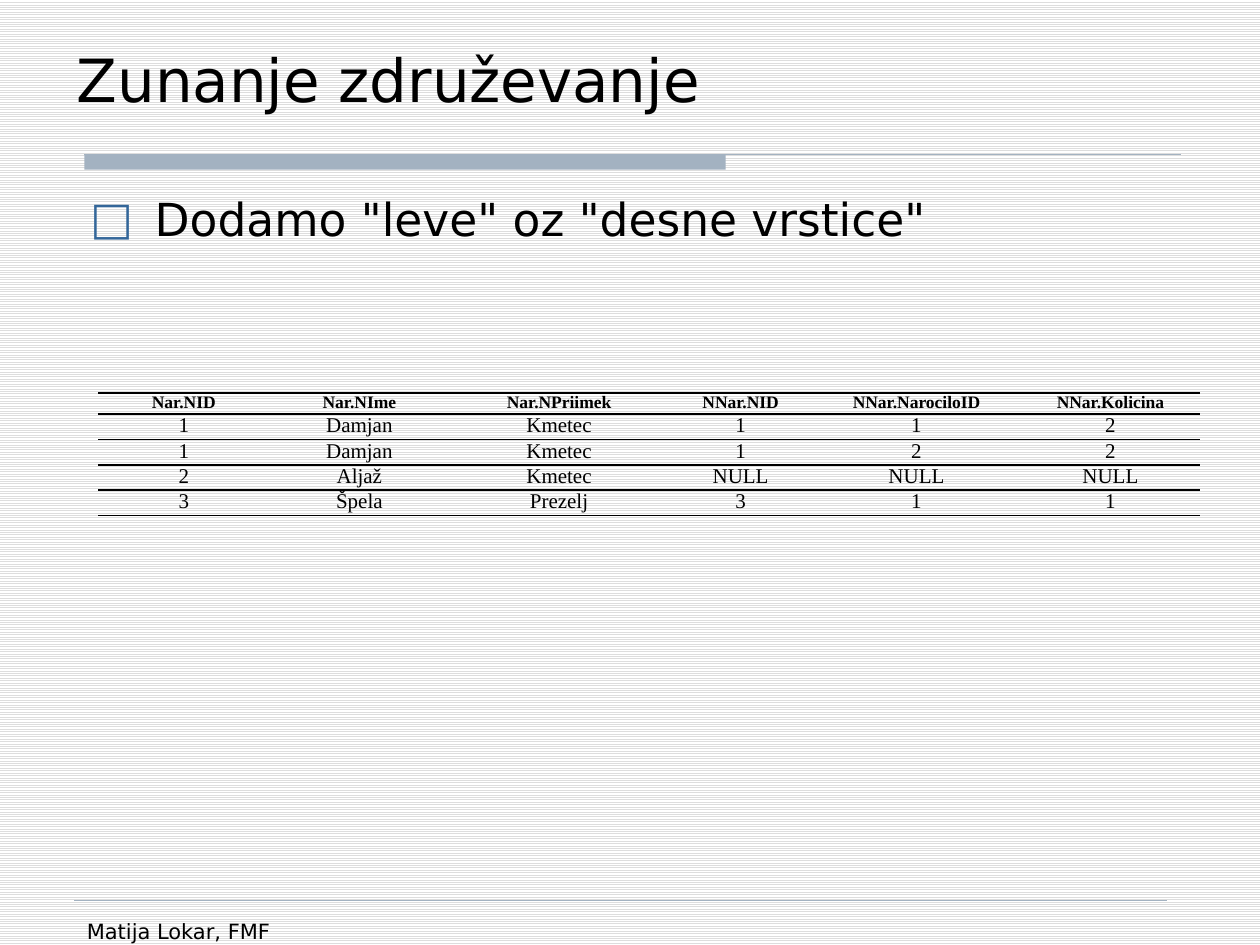
from lxml.etree import SubElement
from pptx import Presentation
from pptx.dml.color import RGBColor
from pptx.enum.dml import MSO_PATTERN
from pptx.enum.shapes import MSO_CONNECTOR, MSO_SHAPE
from pptx.enum.text import MSO_ANCHOR, PP_ALIGN
from pptx.oxml.ns import qn
from pptx.util import Cm, Pt

TITLE = "Zunanje združevanje"
POINT = 'Dodamo "leve" oz "desne vrstice"'
AUTHOR = "Matija Lokar, FMF"
JOINED_ROWS = [
    ("Nar.NID", "Nar.NIme", "Nar.NPriimek", "NNar.NID", "NNar.NarociloID", "NNar.Kolicina"),
    ("1", "Damjan", "Kmetec", "1", "1", "2"),
    ("1", "Damjan", "Kmetec", "1", "2", "2"),
    ("2", "Aljaž", "Kmetec", "NULL", "NULL", "NULL"),
    ("3", "Špela", "Prezelj", "3", "1", "1"),
]
COLUMN_WIDTHS = (3.45, 3.63, 4.42, 2.9, 4.19, 3.63)
HEADER_HEIGHT, ROW_HEIGHT = 0.43, 0.51

BLACK, ACCENT, BULLET = "000000", "A3B2C1", "336699"
SANS, SERIF = "DejaVu Sans", "Times New Roman"
CELL_FORMAT = {
    "margin_left": Cm(0.23), "margin_right": Cm(0.23),
    "margin_top": 0, "margin_bottom": 0,
}


def rgb(color):
    return RGBColor.from_string(color)


def apply(target, values):
    for name, value in values.items():
        setattr(target, name, value)


def write(paragraph, words, size, face, bold=False):
    run = paragraph.add_run()
    run.text = words
    apply(run.font, {"size": Pt(size), "name": face, "bold": bold})
    run.font.color.rgb = rgb(BLACK)


def add_words(slide, box, words, size, anchor=MSO_ANCHOR.TOP):
    frame = slide.shapes.add_textbox(*map(Cm, box)).text_frame
    apply(frame, {"word_wrap": True, "vertical_anchor": anchor})
    paragraph = frame.paragraphs[0]
    write(paragraph, words, size, SANS)
    return paragraph


def add_bullet(paragraph, indent):
    paragraph.space_before = Pt(5.2)  # a fifth of the text size
    properties = paragraph._p.get_or_add_pPr()
    properties.set("marL", str(Cm(indent)))
    properties.set("indent", str(-Cm(indent)))
    color = SubElement(properties, qn("a:buClr"))
    SubElement(color, qn("a:srgbClr"), val=BULLET)
    SubElement(properties, qn("a:buFont"), typeface=SANS)
    SubElement(properties, qn("a:buChar"), char="□")


def add_rule(slide, left, right, y, width):
    rule = slide.shapes.add_connector(
        MSO_CONNECTOR.STRAIGHT, Cm(left), Cm(y), Cm(right), Cm(y))
    rule.line.color.rgb = rgb(ACCENT)
    rule.line.width = Pt(width)
    SubElement(rule._element.spPr, qn("a:effectLst"))


def add_borders(cell):
    """Rule the cell above and below, and leave its sides open."""
    properties = cell._tc.get_or_add_tcPr()
    for side in ("lnL", "lnR"):
        SubElement(SubElement(properties, qn(f"a:{side}")), qn("a:noFill"))
    for side in ("lnT", "lnB"):
        line = SubElement(properties, qn(f"a:{side}"), w=str(Pt(1)))
        fill = SubElement(line, qn("a:solidFill"))
        SubElement(fill, qn("a:srgbClr"), val=BLACK)


def add_join_table(slide, left, top):
    heights = [HEADER_HEIGHT] + [ROW_HEIGHT] * (len(JOINED_ROWS) - 1)
    table = slide.shapes.add_table(
        len(heights), len(COLUMN_WIDTHS), Cm(left), Cm(top),
        Cm(sum(COLUMN_WIDTHS)), Cm(sum(heights))).table
    apply(table, {"first_row": False, "horz_banding": False})
    for column, width in zip(table.columns, COLUMN_WIDTHS):
        column.width = Cm(width)
    for r, (row, height) in enumerate(zip(table.rows, heights)):
        row.height = Cm(height)
        is_header = r == 0
        for cell, words in zip(row.cells, JOINED_ROWS[r]):
            apply(cell, CELL_FORMAT)
            add_borders(cell)
            cell.fill.background()
            paragraph = cell.text_frame.paragraphs[0]
            paragraph.alignment = PP_ALIGN.CENTER
            write(paragraph, words, 10 if is_header else 12, SERIF, is_header)


def main():
    deck = Presentation()
    apply(deck, {"slide_width": Cm(25.4), "slide_height": Cm(19.05)})
    slide = deck.slides.add_slide(deck.slide_layouts[6])

    backdrop = slide.background.fill
    backdrop.patterned()
    backdrop.pattern = MSO_PATTERN.LIGHT_HORIZONTAL
    backdrop.fore_color.rgb = rgb("DDDDDD")
    backdrop.back_color.rgb = rgb("FFFFFF")

    title_bar = slide.shapes.add_shape(
        MSO_SHAPE.RECTANGLE, Cm(1.7), Cm(3.12), Cm(12.93), Cm(0.3))
    title_bar.shadow.inherit = False
    title_bar.fill.solid()
    title_bar.fill.fore_color.rgb = rgb(ACCENT)
    title_bar.line.fill.background()
    add_rule(slide, 1.7, 23.8, 3.12, 0.75)
    add_rule(slide, 1.5, 23.52, 18.14, 0.25)

    add_words(slide, (1.3, 0.53, 22.23, 1.9), TITLE, 34, MSO_ANCHOR.BOTTOM)
    add_words(slide, (1.5, 18.39, 5.51, 1.32), AUTHOR, 12)
    point = add_words(slide, (1.57, 3.73, 22.23, 14), POINT, 26)
    add_bullet(point, 1.3)
    add_join_table(slide, 1.98, 7.92)
    deck.save("out.pptx")


if __name__ == "__main__":
    main()
